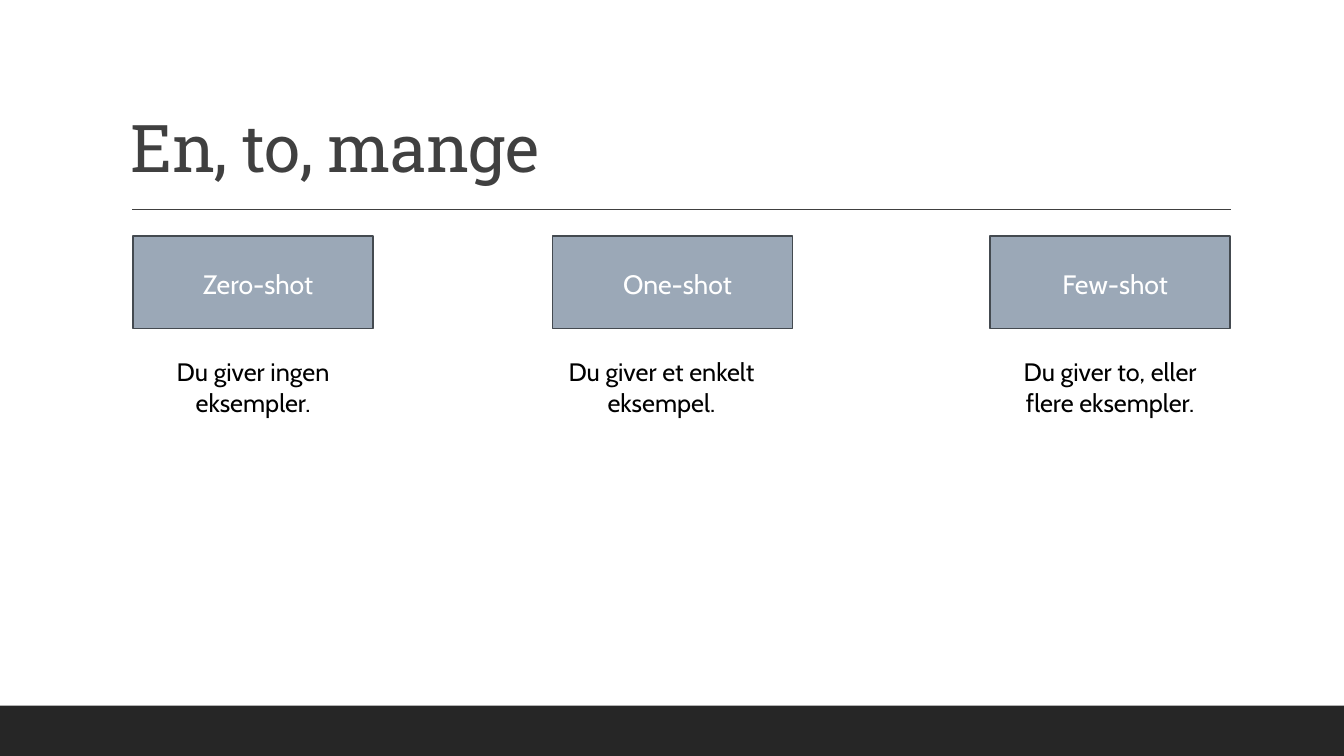
from pptx import Presentation
from pptx.dml.color import RGBColor
from pptx.enum.shapes import MSO_CONNECTOR, MSO_SHAPE
from pptx.enum.text import MSO_ANCHOR, MSO_AUTO_SIZE, PP_ALIGN
from pptx.oxml.ns import qn
from pptx.util import Inches, Pt
from lxml import etree

RECT = MSO_SHAPE.RECTANGLE
STRAIGHT = MSO_CONNECTOR.STRAIGHT
CENTER, LEFT = PP_ALIGN.CENTER, PP_ALIGN.LEFT
TOP, MIDDLE, BOTTOM = MSO_ANCHOR.TOP, MSO_ANCHOR.MIDDLE, MSO_ANCHOR.BOTTOM
GROW = MSO_AUTO_SIZE.SHAPE_TO_FIT_TEXT

WHITE = RGBColor(0xFF, 0xFF, 0xFF)
BLACK = RGBColor(0, 0, 0)
DARK = RGBColor(0x26, 0x26, 0x26)
GRAY = RGBColor(0x40, 0x40, 0x40)
STEEL = RGBColor(0x9B, 0xA8, 0xB7)
EDGE = RGBColor(0x44, 0x4A, 0x50)

SHOTS = [
    ("Zero-shot", 1.32, "Du giver ingen eksempler.", 1.32),
    ("One-shot", 5.48, "Du giver et enkelt eksempel.", 5.37),
    ("Few-shot", 9.82, "Du giver to, eller flere eksempler.", 9.82),
]


class Deck:
    head = "Roboto Slab"
    body = "Cabin"

    def __init__(self):
        self.prs = Presentation()
        self.prs.slide_width = Inches(13.33)
        self.prs.slide_height = Inches(7.5)
        self.slide = self.prs.slides.add_slide(self.prs.slide_layouts[6])
        self.shapes = self.slide.shapes

    def fill_text(self, shape, text, face, size, color, align, anchor):
        frame = shape.text_frame
        frame.word_wrap = True
        frame.vertical_anchor = anchor
        frame.text = text
        para = frame.paragraphs[0]
        para.alignment = align
        font = para.runs[0].font
        font.name = face
        font.size = Pt(size)
        font.color.rgb = color
        return para

    def rect(self, x, y, w, h, fill, edge=None):
        shape = self.shapes.add_shape(RECT, Inches(x), Inches(y), Inches(w), Inches(h))
        shape.shadow.inherit = False
        shape.fill.solid()
        shape.fill.fore_color.rgb = fill
        if edge is None:
            shape.line.fill.background()
        else:
            shape.line.color.rgb = edge
            shape.line.width = Pt(1.25)
        return shape

    def rule(self, x1, x2, y):
        line = self.shapes.add_connector(STRAIGHT, Inches(x1), Inches(y), Inches(x2), Inches(y))
        line.line.color.rgb = GRAY
        line.line.width = Pt(1)
        etree.SubElement(line._element.spPr, qn("a:effectLst"))

    def title(self, text):
        box = self.shapes.add_textbox(Inches(1.2), Inches(0.31), Inches(11), Inches(1.59))
        para = self.fill_text(box, text, self.head, 47, GRAY, LEFT, BOTTOM)
        para.line_spacing = 0.9
        para.runs[0]._r.get_or_add_rPr().set("spc", "-50")

    def label(self, text, x):
        shape = self.rect(x, 2.34, 2.38, 0.92, STEEL, EDGE)
        para = self.fill_text(shape, text, self.body, 19, WHITE, CENTER, MIDDLE)
        para.line_spacing = 1.1
        shape.text_frame.margin_left = Inches(0.1)
        shape.text_frame.margin_right = 0

    def note(self, text, x):
        box = self.shapes.add_textbox(Inches(x), Inches(3.49), Inches(2.38), Inches(0.71))
        self.fill_text(box, text, self.body, 18, BLACK, CENTER, TOP)
        box.text_frame.auto_size = GROW


def main():
    deck = Deck()
    deck.rect(0, 7, 13.33, 0.5, DARK)
    deck.rule(1.31, 12.21, 2.08)
    deck.title("En, to, mange")
    for name, left, text, start in SHOTS:
        deck.label(name, left)
        deck.note(text, start)
    deck.prs.save("out.pptx")


if __name__ == "__main__":
    main()
